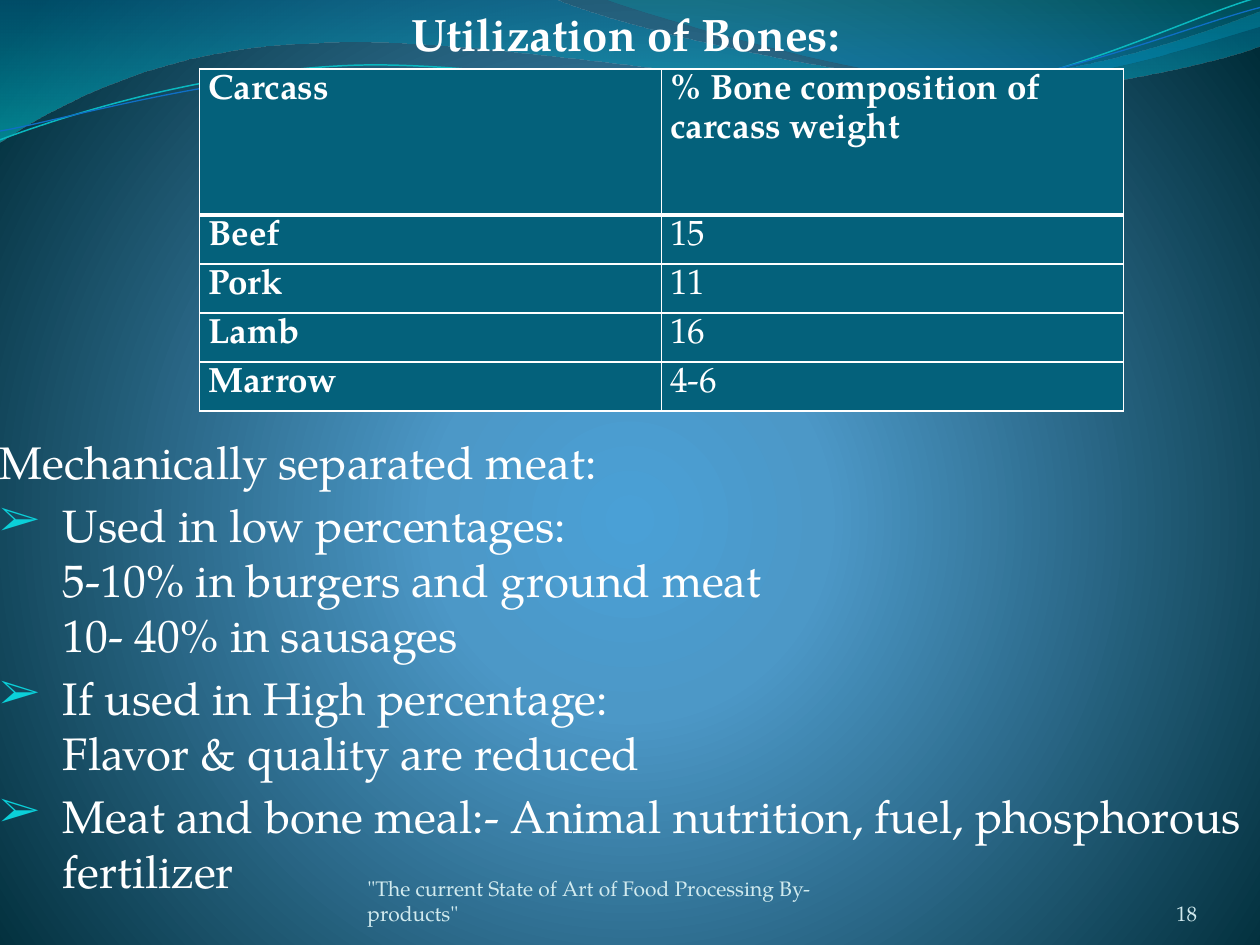
from math import cos, radians, sin
from lxml.etree import SubElement
from pptx import Presentation
from pptx.dml.color import RGBColor
from pptx.enum.text import MSO_ANCHOR, PP_ALIGN
from pptx.oxml.ns import qn
from pptx.util import Pt

FONT = "TeX Gyre Pagella"
WHITE, TEAL, PALE = "FFFFFF", "04617B", "D1EAEE"
TILT = 357.3
WAVE = [
    (0, 0), (316.8, -0.7),
    (342.7, 12.2, 478.1, 45.4, 545.8, 45.4), (614.2, 45.4, 689.8, 18.7, 720, 6.5),
    (720.7, 25.9), (707.8, 31.7, 626.4, 54.7, 537.1, 54),
    (447.8, 54, 275, 20.2, 185, 24.5), (92.9, 25.9, 33.1, 59.8, -0.7, 81.4),
    (0, 0),
]
CREST = [
    (344.9, -0.7), (366.5, 7.9, 491, 44.6, 553.7, 46.8),
    (616.3, 49.7, 691.9, 23, 720, 15.1), (720, 0), (344.9, -0.7),
]
UPPER_LINE = [
    (0, 79.9), (34.6, 67, 113.8, 41, 199.4, 37.4),
    (284.4, 33.8, 427, 64.1, 513.4, 57.6), (599.8, 51.1, 675.4, 10.8, 718.6, -1.4),
]
LOWER_LINE = [
    (0, 74.9), (33.8, 69.1, 118.1, 43.9, 203.8, 40.3),
    (290.2, 36.7, 429.8, 60.5, 516.2, 54), (601.9, 48.2, 677.5, 15.1, 720, 4.3),
]
ROWS = [
    ("Carcass", "% Bone composition of carcass weight"),
    ("Beef", "15"), ("Pork", "11"), ("Lamb", "16"), ("Marrow", "4-6"),
]
BULLETS = [
    ["Used in low percentages:", "5-10% in burgers and ground meat", "10- 40% in sausages"],
    ["If used in High percentage: ", "Flavor & quality are reduced"],
    ["Meat and bone meal:- Animal nutrition, fuel, phosphorous fertilizer"],
]


def rgb(color):
    """Turn a hex string into a colour."""
    return RGBColor.from_string(color)


def child(parent, tag, **attrs):
    """Append a DrawingML element with the given attributes."""
    return SubElement(parent, qn("a:" + tag), {k: str(v) for k, v in attrs.items()})


def set_gradient(owner, fill, stops, center=None):
    """Fill with (position, colour, opacity) stops, vertical or around a center."""
    fill.gradient()
    grad = next(owner.element.iter(qn("a:gradFill")))
    for old in list(grad):
        grad.remove(old)
    gs_list = child(grad, "gsLst")
    for pos, color, opacity in stops:
        gs = child(gs_list, "gs", pos=pos * 1000)
        child(child(gs, "srgbClr", val=color), "alpha", val=opacity * 1000)
    if center:
        child(child(grad, "path", path="circle"), "fillToRect", **center)
    else:
        child(grad, "lin", ang=5400000, scaled=1)


def level(segments, center):
    """Turn points back by the tilt, so that the shape's rotation restores it."""
    cx, cy = center
    c, s = cos(radians(-TILT)), sin(radians(-TILT))
    result = []
    for seg in segments:
        pairs = [(x - cx, y - cy) for x, y in zip(seg[::2], seg[1::2])]
        result.append(tuple(v for x, y in pairs for v in (cx + x * c - y * s, cy + x * s + y * c)))
    return result


def add_curve(s, segments, closed=False):
    """Draw an outline of straight segments and cubic curves."""
    anchors = [(Pt(seg[-2]), Pt(seg[-1])) for seg in segments]
    builder = s.shapes.build_freeform(*anchors[0])
    builder.add_line_segments(anchors[1:], close=closed)
    sp = builder.convert_to_shape()
    sp.shadow.inherit = False
    for seg, line_to in zip(segments[1:], list(sp.element.iter(qn("a:lnTo")))):
        if len(seg) == 6:
            line_to.tag = qn("a:cubicBezTo")
            line_to.clear()
            for x, y in zip(seg[::2], seg[1::2]):
                child(line_to, "pt", x=Pt(x) - sp.left, y=Pt(y) - sp.top)
    return sp


def add_wave(s, segments, stops):
    """Add a closed wave with a gradient fill."""
    sp = add_curve(s, segments, closed=True)
    set_gradient(sp, sp.fill, stops)
    sp.line.fill.background()


def add_wave_line(s, segments, center, color, width):
    """Add a tilted open wave line."""
    sp = add_curve(s, level(segments, center))
    sp.rotation = TILT
    sp.fill.background()
    sp.line.color.rgb = rgb(color)
    sp.line.width = Pt(width)


def add_run(p, text, size, color=WHITE, bold=False):
    """Add one formatted run."""
    r = p.add_run()
    r.text = text
    r.font.name, r.font.size, r.font.bold = FONT, Pt(size), bold
    r.font.color.rgb = rgb(color)


def add_box(s, x, y, w, h, margins=(0, 0, 0, 0), anchor=MSO_ANCHOR.TOP):
    """Add a wrapping text box and return its text frame."""
    tf = s.shapes.add_textbox(Pt(x), Pt(y), Pt(w), Pt(h)).text_frame
    tf.word_wrap = True
    tf.vertical_anchor = anchor
    tf.margin_left, tf.margin_top, tf.margin_right, tf.margin_bottom = map(Pt, margins)
    return tf


def add_bullet(tf, lines):
    """Add an arrow-bulleted paragraph with line breaks."""
    p = tf.add_paragraph()
    p.space_before = Pt(5.2)
    pPr = p._p.get_or_add_pPr()
    pPr.set("marL", str(Pt(36)))
    pPr.set("indent", str(-Pt(36)))
    child(child(pPr, "buClr"), "srgbClr", val="0BD0D9")
    child(pPr, "buSzPct", val=95000)
    child(pPr, "buFont", typeface=FONT)
    child(pPr, "buChar", char="➢")
    for i, line in enumerate(lines):
        if i:
            p.add_line_break()
        add_run(p, line, 26)


def add_body(s):
    """Add the title, the lead line and the bullets around the table."""
    tf = add_box(s, 0, 0, 720, 540, (0, 3.6, 1.4, 3.6))
    p = tf.paragraphs[0]
    p.alignment = PP_ALIGN.CENTER
    p.space_before = Pt(5.2)
    p._p.get_or_add_pPr().set("marR", str(Pt(3.6)))
    add_run(p, "Utilization of Bones:", 26, bold=True)
    p = tf.add_paragraph()
    p.space_before = Pt(213.2)
    add_run(p, "Mechanically separated meat:", 26)
    for lines in BULLETS:
        add_bullet(tf, lines)


def set_borders(cell, bottom):
    """Give a cell white borders with its own bottom width."""
    tcPr = cell._tc.get_or_add_tcPr()
    for side, width in (("L", 1), ("R", 1), ("T", 1), ("B", bottom)):
        ln = child(tcPr, "ln" + side, w=Pt(width))
        child(child(ln, "solidFill"), "srgbClr", val=WHITE)


def add_bone_table(s):
    """Add the table of bone shares by carcass."""
    table = s.shapes.add_table(len(ROWS), 2, Pt(114), Pt(39.4), Pt(528), Pt(195.5)).table
    for i, row in enumerate(ROWS):
        table.rows[i].height = Pt(28 if i else 83.5)
        for j, text in enumerate(row):
            cell = table.cell(i, j)
            set_borders(cell, 1 if i else 3)
            cell.fill.solid()
            cell.fill.fore_color.rgb = rgb(TEAL)
            cell.margin_left = cell.margin_right = Pt(5)
            cell.margin_top = cell.margin_bottom = 0
            p = cell.text_frame.paragraphs[0]
            p.line_spacing = 1.15
            add_run(p, text, 20, bold=i == 0 or j == 0)


def add_footer(s, x, w, text, align):
    """Add a small text at the foot of the slide."""
    p = add_box(s, x, 500.4, w, 28.8, anchor=MSO_ANCHOR.BOTTOM).paragraphs[0]
    p.alignment = align
    add_run(p, text, 12, PALE)


def main():
    """Build and save the slide."""
    prs = Presentation()
    prs.slide_width, prs.slide_height = Pt(720), Pt(540)
    s = prs.slides.add_slide(prs.slide_layouts[6])
    set_gradient(s, s.background.fill,
                 [(0, "4AA0D6", 100), (25, "4C98C7", 100), (100, "002C38", 100)],
                 {"l": 10000, "t": 110000, "r": 10000, "b": 100000})
    add_wave(s, WAVE, [(0, "0074A1", 45), (100, "00C6CF", 55)])
    add_wave(s, CREST, [(0, "00A1A9", 30), (80, "008BBF", 45)])
    add_wave_line(s, UPPER_LINE, (359.3, 41.4), "0AB8BF", 0.85)
    add_wave_line(s, LOWER_LINE, (359.6, 42.5), "0F6FC6", 0.75)
    add_body(s)
    add_bone_table(s)
    add_footer(s, 210, 264, '"The current State of Art of Food Processing By-products"', PP_ALIGN.LEFT)
    add_footer(s, 624, 60, "18", PP_ALIGN.RIGHT)
    prs.save("out.pptx")


if __name__ == "__main__":
    main()
